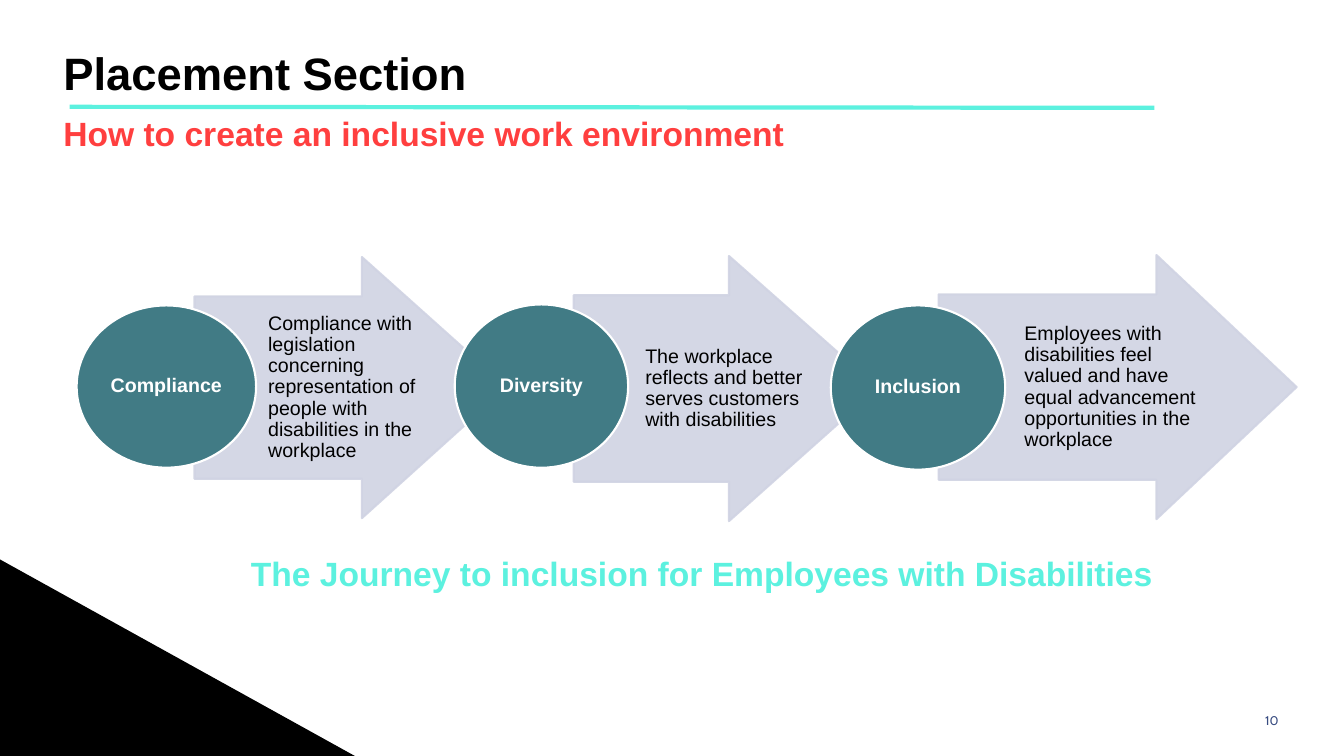
from pptx import Presentation
from pptx import util as u
from pptx.dml.color import RGBColor
from pptx.enum import shapes, text
from pptx.oxml.ns import qn
from lxml import etree

PX = 9144  # 100 px to the inch
COLORS = {
    "black": "000000", "white": "FFFFFF", "aqua": "5CF1DF", "red": "FF3F3F",
    "teal": "417B85", "lavender": "D0D3E3", "navy": "384C81",
}
# label, description, circle box, arrow box, head length, side insets
STEPS = [
    ("Compliance",
     "Compliance with legislation concerning representation of people with "
     "disabilities in the workplace",
     (76, 303, 178, 161), (193, 255, 310, 259), 144, (73, 75)),
    ("Diversity",
     "The workplace reflects and better serves customers with disabilities",
     (451, 302, 172, 162), (569, 254, 302, 263), 148, (71, 72)),
    ("Inclusion",
     "Employees with disabilities feel valued and have equal advancement "
     "opportunities in the workplace",
     (824, 303, 173, 163), (931, 253, 355, 262), 139, (85, 87)),
]


def px(*lengths):
    return [u.Emu(n * PX) for n in lengths]


def rgb(name):
    return RGBColor.from_string(COLORS[name])


def write(sp, words, size, color, bold=False, font="Arial",
          align=text.PP_ALIGN.LEFT, anchor=text.MSO_ANCHOR.MIDDLE,
          insets=(10, 5, 10, 5), spacing=None):
    tf = sp.text_frame
    tf.word_wrap = True
    tf.vertical_anchor = anchor
    tf.margin_left, tf.margin_top, tf.margin_right, tf.margin_bottom = px(*insets)
    p = tf.paragraphs[0]
    p.alignment = align
    p.line_spacing = spacing
    r = p.add_run()
    r.text = words
    r.font.size, r.font.name, r.font.bold = u.Pt(size), font, bold
    r.font.color.rgb = rgb(color)


def add_label(s, box, *args, **kwargs):
    write(s.shapes.add_textbox(*px(*box)), *args, **kwargs)


def paint(sp, fill, line=None):
    sp.shadow.inherit = False
    sp.fill.solid()
    sp.fill.fore_color.rgb = rgb(fill)
    if line:
        sp.line.color.rgb = rgb(line)
        sp.line.width = u.Pt(1.5)
    else:
        sp.line.fill.background()


def add_polygon(s, points):
    builder = s.shapes.build_freeform(*points[0], scale=PX)
    builder.add_line_segments(points[1:], close=True)
    return builder.convert_to_shape()


def add_arrow(s, box, head, sides, words):
    left, top, width, height = box
    right, bottom = left + width, top + height
    neck, shoulder = right - head, round(height * 0.15)
    sp = add_polygon(s, [
        (left, top + shoulder), (neck, top + shoulder), (neck, top),
        (right, top + height // 2), (neck, bottom),
        (neck, bottom - shoulder), (left, bottom - shoulder)])
    paint(sp, "lavender", "lavender")
    for clr in sp._element.spPr.iter(qn("a:srgbClr")):
        etree.SubElement(clr, qn("a:alpha"), val="90000")
    write(sp, words, 14, "black", insets=(sides[0], 40, sides[1], 40), spacing=0.9)


def add_circle(s, box, words):
    sp = s.shapes.add_shape(shapes.MSO_SHAPE.OVAL, *px(*box))
    paint(sp, "teal", "white")
    write(sp, words, 14, "white", True, align=text.PP_ALIGN.CENTER,
          insets=(0, 0, 0, 0), spacing=0.9)


def add_header(s, left, top):
    add_label(s, (left, top, 1163, 68), "Placement Section", 32.4, "black", True)
    rule = s.shapes.add_connector(
        shapes.MSO_CONNECTOR.STRAIGHT,
        *px(left + 16, top + 68, left + 1092, top + 69))
    rule.line.color.rgb = rgb("aqua")
    rule.line.width = u.Pt(3)
    etree.SubElement(rule._element.spPr, qn("a:effectLst"))
    add_label(s, (left, top + 69, 923, 50),
              "How to create an inclusive work environment", 24, "red", True,
              anchor=text.MSO_ANCHOR.TOP)


def add_journey(s):
    for label, words, circle, arrow, head, sides in STEPS:
        add_arrow(s, arrow, head, sides, words)
        add_circle(s, circle, label)
    add_label(s, (239, 544, 923, 50),
              "The Journey to inclusion for Employees with Disabilities",
              24, "aqua", True, anchor=text.MSO_ANCHOR.TOP)


def add_footer(s, width, height):
    paint(add_polygon(s, [(0, height - 195), (0, height), (352, height)]), "black")
    add_label(s, (width - 130, height - 55, 75, 40), "10", 9, "navy",
              font="Cabin", align=text.PP_ALIGN.RIGHT)


def main():
    width, height = 1333, 750
    prs = Presentation()
    prs.slide_width, prs.slide_height = px(width, height)
    s = prs.slides.add_slide(prs.slide_layouts[6])
    add_footer(s, width, height)
    add_header(s, 53, 38)
    add_journey(s)
    prs.save("out.pptx")


if __name__ == "__main__":
    main()
